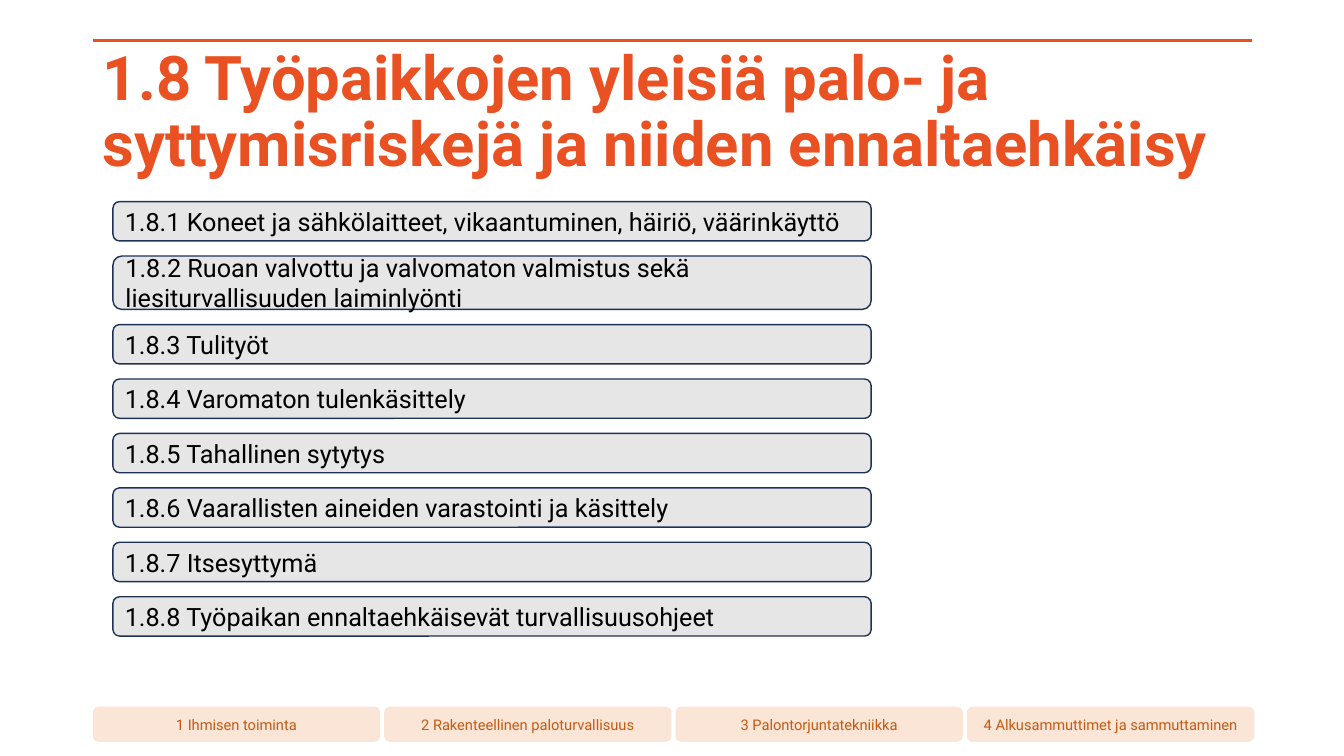
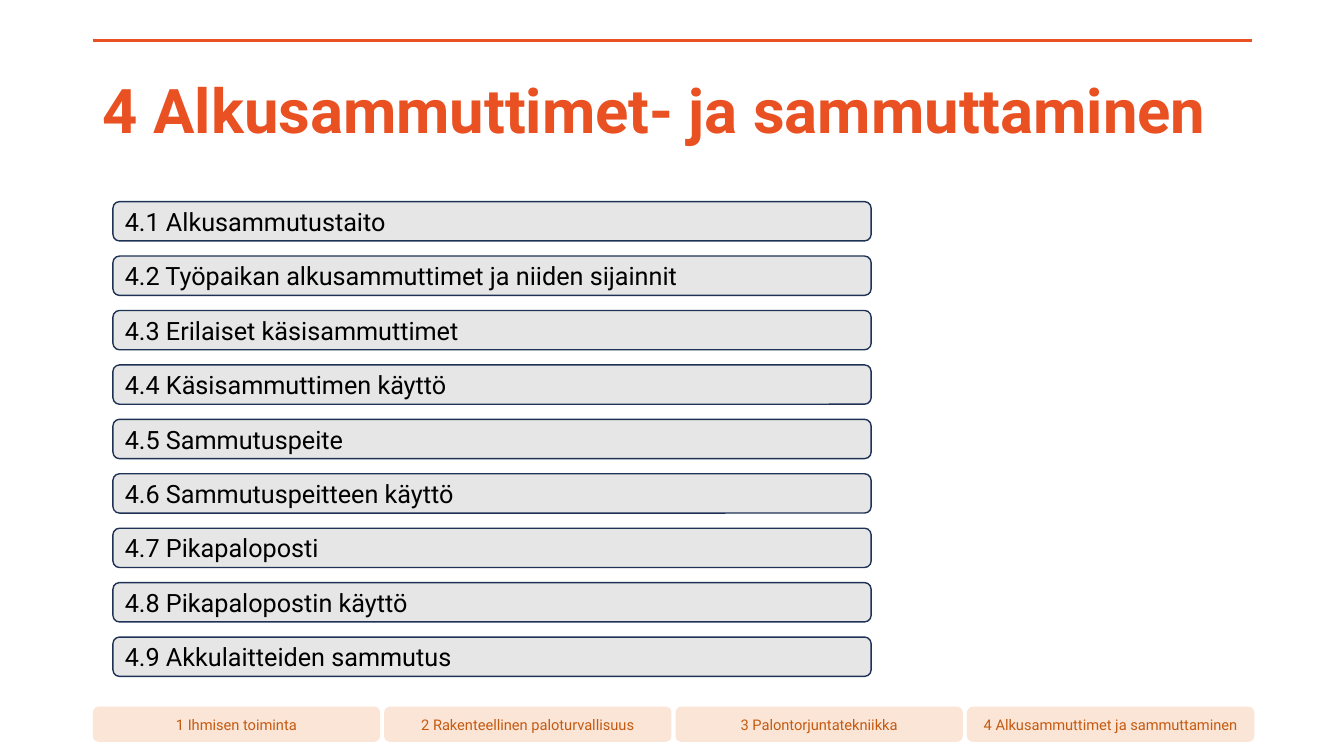
import pptx
import pptx.util
import pptx.dml.color
import pptx.enum.shapes
import pptx.enum.text
import pptx.oxml.ns
import lxml.etree

Inches = pptx.util.Inches
Pt = pptx.util.Pt
RGBColor = pptx.dml.color.RGBColor
ALIGN = pptx.enum.text.PP_ALIGN
MIDDLE = pptx.enum.text.MSO_ANCHOR.MIDDLE

ORANGE = RGBColor(0xE9, 0x51, 0x23)
PEACH = RGBColor(0xFB, 0xE5, 0xD6)
RUST = RGBColor(0xC5, 0x5A, 0x11)
GREY = RGBColor(0xE7, 0xE6, 0xE6)
NAVY = RGBColor(0x1E, 0x32, 0x56)
BLACK = RGBColor(0, 0, 0)
FONT = "Roboto"

MARGIN = 0.92
CONTENT_WIDTH = 11.5
RULE_TOP = 0.4
TAB_WIDTH, TAB_GAP = 2.85, 0.04
TOPIC_HEIGHT, TALL_TOPIC_HEIGHT, TOPIC_GAP = 0.39, 0.53, 0.15
TOPIC_LINE_LENGTH = 70

CHAPTERS = [
    "1 Ihmisen toiminta",
    "2 Rakenteellinen paloturvallisuus",
    "3 Palontorjuntatekniikka",
    "4 Alkusammuttimet ja sammuttaminen",
]

PAGES = [
    ("1.8 Työpaikkojen yleisiä palo- ja syttymisriskejä ja niiden ennaltaehkäisy", [
        "1.8.1 Koneet ja sähkölaitteet, vikaantuminen, häiriö, väärinkäyttö",
        "1.8.2 Ruoan valvottu ja valvomaton valmistus sekä liesiturvallisuuden laiminlyönti",
        "1.8.3 Tulityöt",
        "1.8.4 Varomaton tulenkäsittely",
        "1.8.5 Tahallinen sytytys",
        "1.8.6 Vaarallisten aineiden varastointi ja käsittely",
        "1.8.7 Itsesyttymä",
        "1.8.8 Työpaikan ennaltaehkäisevät turvallisuusohjeet",
    ]),
    ("4 Alkusammuttimet- ja sammuttaminen", [
        "4.1 Alkusammutustaito",
        "4.2 Työpaikan alkusammuttimet ja niiden sijainnit",
        "4.3 Erilaiset käsisammuttimet",
        "4.4 Käsisammuttimen käyttö",
        "4.5 Sammutuspeite",
        "4.6 Sammutuspeitteen käyttö",
        "4.7 Pikapaloposti",
        "4.8 Pikapalopostin käyttö",
        "4.9 Akkulaitteiden sammutus",
    ]),
]


def set_text(frame, text, size, color, align, bold=False):
    frame.text = text
    frame.word_wrap = True
    frame.vertical_anchor = MIDDLE
    paragraph = frame.paragraphs[0]
    paragraph.alignment = align
    paragraph.font.name = FONT
    paragraph.font.size = Pt(size)
    paragraph.font.bold = bold
    paragraph.font.color.rgb = color
    return paragraph


def add_box(slide, left, top, width, height, fill, outline=None):
    box = slide.shapes.add_shape(
        pptx.enum.shapes.MSO_SHAPE.ROUNDED_RECTANGLE,
        Inches(left), Inches(top), Inches(width), Inches(height))
    box.shadow.inherit = False
    box.fill.solid()
    box.fill.fore_color.rgb = fill
    if outline is None:
        box.line.fill.background()
    else:
        box.line.color.rgb = outline
        box.line.width = Pt(1)
    return box


def add_rule(slide):
    rule = slide.shapes.add_connector(
        pptx.enum.shapes.MSO_CONNECTOR.STRAIGHT,
        Inches(MARGIN), Inches(RULE_TOP),
        Inches(MARGIN + CONTENT_WIDTH), Inches(RULE_TOP))
    rule.line.color.rgb = ORANGE
    rule.line.width = Pt(2.5)
    lxml.etree.SubElement(rule.element.spPr, pptx.oxml.ns.qn("a:effectLst"))
    return rule


def add_chapter_tab(slide, index, chapter):
    left = MARGIN + index * (TAB_WIDTH + TAB_GAP)
    tab = add_box(slide, left, 7.01, TAB_WIDTH, 0.35, PEACH)
    set_text(tab.text_frame, chapter, 10.5, RUST, ALIGN.CENTER)
    return tab


def move_to_layout(shapes, layout):
    for shape_id, shape in enumerate(shapes, start=100):
        shape.element.xpath(".//p:cNvPr")[0].set("id", str(shape_id))
        layout.shapes.element.append(shape.element)


def add_title(slide, text):
    title = slide.shapes.title
    title.left, title.top = Inches(MARGIN), Inches(RULE_TOP)
    title.width, title.height = Inches(CONTENT_WIDTH), Inches(1.45)
    title.text_frame.auto_size = pptx.enum.text.MSO_AUTO_SIZE.NONE
    paragraph = set_text(title.text_frame, text, 44, ORANGE, ALIGN.LEFT, bold=True)
    paragraph.line_spacing = 0.9


def add_topics(slide, topics):
    top = 2
    for topic in topics:
        height = TALL_TOPIC_HEIGHT if len(topic) > TOPIC_LINE_LENGTH else TOPIC_HEIGHT
        row = add_box(slide, 1.12, top, 7.52, height, GREY, NAVY)
        set_text(row.text_frame, topic, 18, BLACK, ALIGN.LEFT)
        top += height + TOPIC_GAP


def main():
    deck = pptx.Presentation()
    deck.slide_width, deck.slide_height = Inches(13.33), Inches(7.5)
    layout = deck.slide_layouts.get_by_name("Title Only")
    slides = [deck.slides.add_slide(layout) for _ in PAGES]

    tabs = [add_chapter_tab(slides[0], i, chapter) for i, chapter in enumerate(CHAPTERS)]
    move_to_layout([add_rule(slides[0])] + tabs, layout)

    for slide, (title, topics) in zip(slides, PAGES):
        add_title(slide, title)
        add_topics(slide, topics)
    deck.save("out.pptx")


if __name__ == "__main__":
    main()
